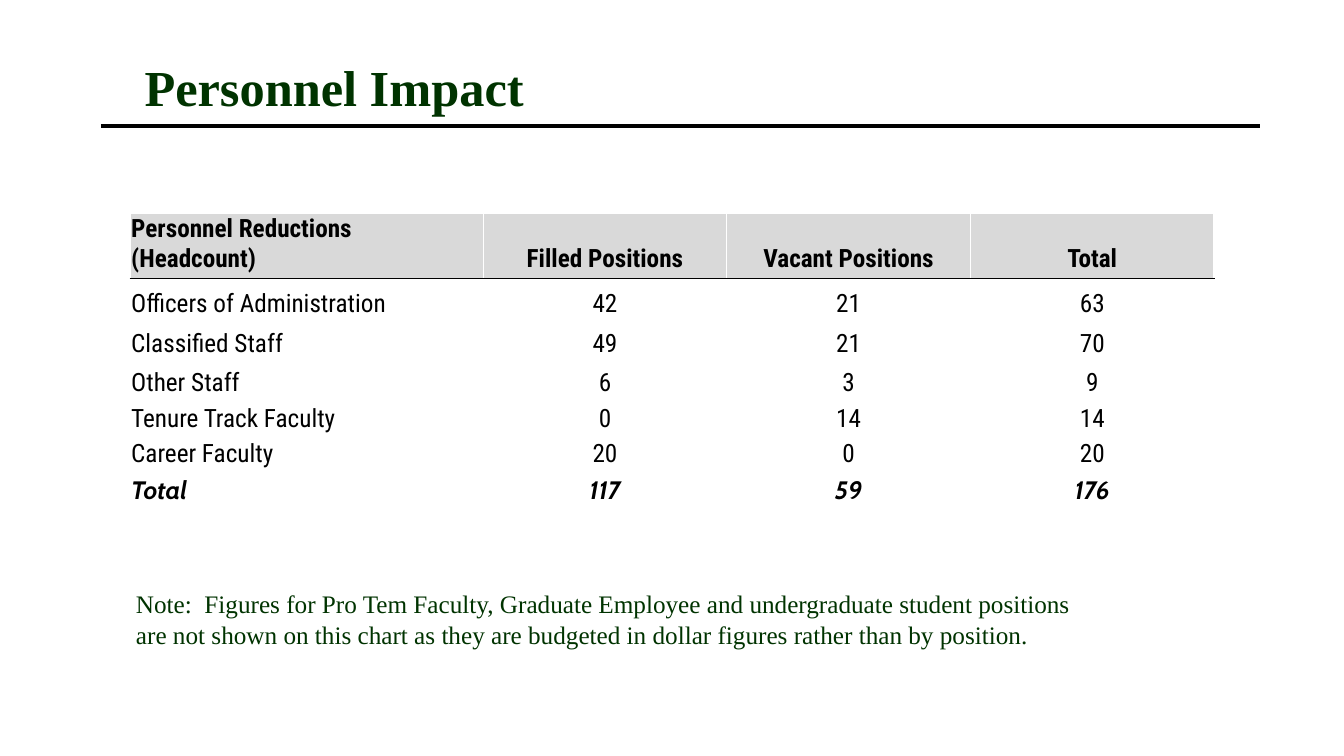
from dataclasses import dataclass

from lxml.etree import SubElement
from pptx import Presentation
from pptx.dml.color import RGBColor
from pptx.enum.shapes import MSO_CONNECTOR
from pptx.enum.text import MSO_ANCHOR, PP_ALIGN
from pptx.oxml import parse_xml
from pptx.oxml.ns import nsdecls, qn
from pptx.util import Inches, Pt


@dataclass(frozen=True)
class Theme:
    green: str = "003300"
    black: str = "000000"
    header_fill: str = "D9D9D9"
    serif: str = "Times New Roman"
    table_font: str = "Roboto Condensed"
    total_font: str = "Cabin"
    title_size: int = 36
    text_size: int = 18
    rule_width: float = 2.25
    border_width: float = 0.5


HEADERS = ["Personnel Reductions (Headcount)", "Filled Positions", "Vacant Positions", "Total"]
HEADCOUNTS = [
    ("Officers of Administration", 42, 21, 63),
    ("Classified Staff", 49, 21, 70),
    ("Other Staff", 6, 3, 9),
    ("Tenure Track Faculty", 0, 14, 14),
    ("Career Faculty", 20, 0, 20),
    ("Total", 117, 59, 176),
]
NOTE = (
    "Note:  Figures for Pro Tem Faculty, Graduate Employee and undergraduate student positions "
    "are not shown on this chart as they are budgeted in dollar figures rather than by position."
)


def grid(units):
    """Length of grid units, twelve to the inch: the slide has 160 columns and 90 rows."""
    return Inches(units / 12)


class SlideBuilder:
    def __init__(self, deck, theme):
        self.theme = theme
        self.page = deck.slides.add_slide(deck.slide_layouts[5])

    def format_runs(self, para, size, font, color, bold=False, italic=False):
        for span in para.runs:
            span.font.size = Pt(size)
            span.font.name = font
            span.font.color.rgb = RGBColor.from_string(color)
            span.font.bold = bold
            span.font.italic = italic

    def title(self, text, left, top, width, height):
        box = self.page.shapes.title
        box.left, box.top, box.width, box.height = map(grid, (left, top, width, height))
        frame = box.text_frame
        frame.text = text
        frame.vertical_anchor = MSO_ANCHOR.MIDDLE
        para = frame.paragraphs[0]
        para.alignment = PP_ALIGN.LEFT
        self.format_runs(para, self.theme.title_size, self.theme.serif, self.theme.green, bold=True)

    def rule(self, left, right, row):
        line = self.page.shapes.add_connector(
            MSO_CONNECTOR.STRAIGHT, grid(left), grid(row), grid(right), grid(row)
        )
        line.line.color.rgb = RGBColor.from_string(self.theme.black)
        line.line.width = Pt(self.theme.rule_width)
        SubElement(line._element.spPr, qn("a:effectLst"))

    def border(self, cell, side):
        """Draw a thin line on one side of a cell: T or B."""
        width = Pt(self.theme.border_width)
        edge = parse_xml(
            f'<a:ln{side} {nsdecls("a")} w="{width}"><a:solidFill>'
            f'<a:srgbClr val="{self.theme.black}"/></a:solidFill></a:ln{side}>'
        )
        cell._tc.get_or_add_tcPr().insert(0, edge)

    def table(self, rows, left, top, columns, heights):
        table = self.page.shapes.add_table(
            len(rows), len(columns), grid(left), grid(top), grid(sum(columns)), grid(sum(heights))
        ).table
        table.first_row = table.horz_banding = False
        for column, width in zip(table.columns, columns):
            column.width = grid(width)
        for line, height in zip(table.rows, heights):
            line.height = grid(height)
        for r, values in enumerate(rows):
            for c, value in enumerate(values):
                self.cell(table.cell(r, c), value, r, c, is_total=r == len(rows) - 1)

    def cell(self, cell, value, row, column, is_total):
        theme = self.theme
        is_header = row == 0
        cell.text_frame.text = str(value)
        cell.vertical_anchor = MSO_ANCHOR.BOTTOM
        cell.margin_left = cell.margin_right = cell.margin_top = Inches(0.01)
        cell.margin_bottom = Inches(0.05)
        if is_header:
            cell.fill.solid()
            cell.fill.fore_color.rgb = RGBColor.from_string(theme.header_fill)
            self.border(cell, "B")
        else:
            cell.fill.background()
        if row == 1:
            self.border(cell, "T")
        para = cell.text_frame.paragraphs[0]
        para.alignment = PP_ALIGN.CENTER if column else PP_ALIGN.LEFT
        font = theme.total_font if is_total else theme.table_font
        self.format_runs(
            para, theme.text_size, font, theme.black, bold=is_header or is_total, italic=is_total
        )

    def note(self, text, left, top, width, height, indent):
        frame = self.page.shapes.add_textbox(*map(grid, (left, top, width, height))).text_frame
        frame.word_wrap = True
        frame.text = text
        para = frame.paragraphs[0]
        para.space_before = para.space_after = Pt(6)
        para._p.get_or_add_pPr().set("marL", str(grid(indent)))
        self.format_runs(para, self.theme.text_size, self.theme.serif, self.theme.green)


def main():
    deck = Presentation()
    deck.slide_width, deck.slide_height = Inches(13.33), Inches(7.5)
    slide = SlideBuilder(deck, Theme())
    slide.title("Personnel Impact", 16, 3, 113, 14.6)
    slide.rule(12, 150, 15)
    slide.table(
        [HEADERS, *HEADCOUNTS],
        left=15.5,
        top=25.4,
        columns=[42, 29, 29, 29],
        heights=[6, 5.4, 4.8, 4.6, 4, 2.8, 2.6],
    )
    slide.note(NOTE, 3, 69.5, 129, 8.5, indent=12)
    deck.save("out.pptx")


if __name__ == "__main__":
    main()
